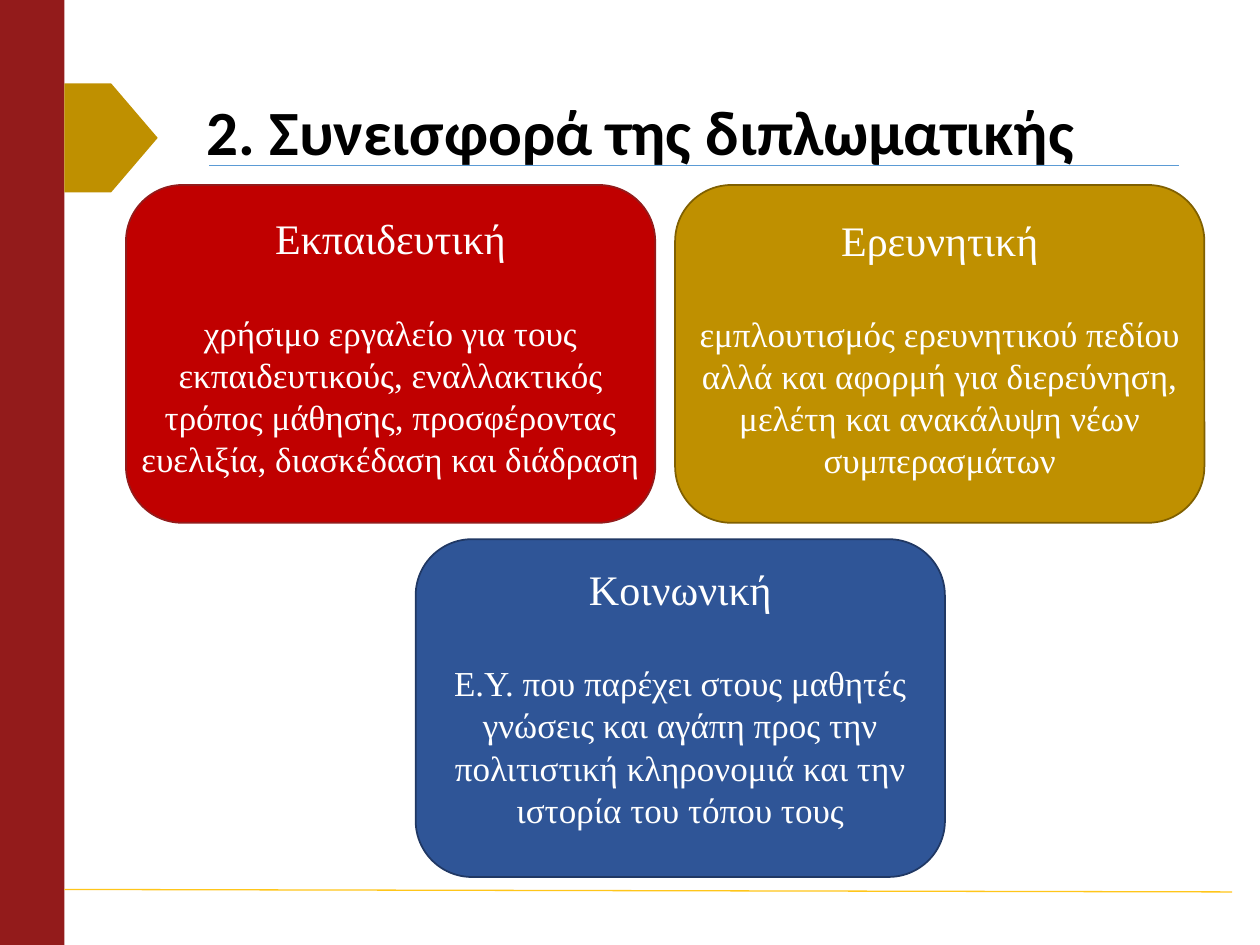
from lxml import etree
from pptx import Presentation
from pptx.dml.color import RGBColor
from pptx.enum.shapes import MSO_CONNECTOR, MSO_SHAPE
from pptx.enum.text import MSO_ANCHOR, PP_ALIGN
from pptx.oxml.ns import qn
from pptx.util import Cm, Pt

RECTANGLE = MSO_SHAPE.RECTANGLE
PENTAGON = MSO_SHAPE.PENTAGON
ROUNDED = MSO_SHAPE.ROUNDED_RECTANGLE
STRAIGHT = MSO_CONNECTOR.STRAIGHT
MIDDLE = MSO_ANCHOR.MIDDLE
LEFT, CENTER = PP_ALIGN.LEFT, PP_ALIGN.CENTER

SLIDE_W, SLIDE_H = 25.4, 19.05
BAND_W = 1.3
CARD_W, CARD_H = 10.67, 6.81
TOP_ROW, BOTTOM_ROW = 3.73, 10.87

CARDS = [
    (2.54, TOP_ROW, 0.43, "C00000", "931B1B", "Εκπαιδευτική",
     "χρήσιμο εργαλείο για τους εκπαιδευτικούς, εναλλακτικός τρόπος μάθησης, "
     "προσφέροντας ευελιξία, διασκέδαση και διάδραση"),
    (8.38, BOTTOM_ROW, 0.36, "2F5597", "203864", "Κοινωνική",
     "Ε.Υ. που παρέχει στους μαθητές γνώσεις και αγάπη προς την "
     "πολιτιστική κληρονομιά και την ιστορία του τόπου τους"),
    (13.61, TOP_ROW, 0.46, "BF9000", "806000", "Ερευνητική",
     "εμπλουτισμός ερευνητικού πεδίου αλλά και αφορμή για διερεύνηση, "
     "μελέτη και ανακάλυψη νέων συμπερασμάτων"),
]


def color(value):
    return RGBColor.from_string(value)


def add_block(slide, kind, left, top, width, height, fill, outline=None):
    block = slide.shapes.add_shape(kind, Cm(left), Cm(top), Cm(width), Cm(height))
    block.shadow.inherit = False
    block.fill.solid()
    block.fill.fore_color.rgb = color(fill)
    if outline:
        block.line.color.rgb = color(outline)
        block.line.width = Pt(1)
    else:
        block.line.fill.background()


def add_rule(slide, x1, y1, x2, y2, stroke):
    rule = slide.shapes.add_connector(STRAIGHT, Cm(x1), Cm(y1), Cm(x2), Cm(y2))
    rule.line.color.rgb = color(stroke)
    rule.line.width = Pt(0.75)
    etree.SubElement(rule._element.spPr, qn("a:effectLst"))


def add_run(paragraph, text, font, size, ink, bold=False):
    run = paragraph.add_run()
    run.text = text
    run.font.name = font
    run.font.size = Pt(size)
    run.font.bold = bold
    run.font.color.rgb = color(ink)


def add_frame(slide):
    add_block(slide, RECTANGLE, 0, 0, BAND_W, SLIDE_H, "931B1B")
    add_rule(slide, 4.22, 3.33, 23.77, 3.33, "5B9BD5")
    add_rule(slide, BAND_W, 17.93, 24.84, 17.98, "FFC61A")
    add_block(slide, PENTAGON, BAND_W, 1.68, 1.88, 2.2, "BF9000")


def fill_title(slide, left, top, width, height, text):
    title = slide.shapes.title
    title.left, title.top = Cm(left), Cm(top)
    title.width, title.height = Cm(width), Cm(height)
    frame = title.text_frame
    frame.word_wrap = True
    frame.vertical_anchor = MIDDLE
    paragraph = frame.paragraphs[0]
    paragraph.alignment = LEFT
    paragraph.line_spacing = 0.9
    add_run(paragraph, text, "Calibri", 36, "000000", True)


def add_card(slide, left, top, text_drop, fill, outline, heading, body):
    add_block(slide, ROUNDED, left, top, CARD_W, CARD_H, fill, outline)
    caption = slide.shapes.add_textbox(
        Cm(left), Cm(top + text_drop), Cm(CARD_W), Cm(5.74))
    frame = caption.text_frame
    frame.word_wrap = True
    heading_line = frame.paragraphs[0]
    body_lines = frame.add_paragraph()
    body_lines.space_before = Pt(27.6)
    for paragraph, text, size in ((heading_line, heading, 24), (body_lines, body, 20)):
        paragraph.alignment = CENTER
        add_run(paragraph, text, "Times New Roman", size, "FFFFFF")


def main():
    deck = Presentation()
    deck.slide_width, deck.slide_height = Cm(SLIDE_W), Cm(SLIDE_H)
    slide = deck.slides.add_slide(deck.slide_layouts[5])
    add_frame(slide)
    fill_title(slide, 3.91, 1.93, 19.99, 1.6, "2. Συνεισφορά της διπλωματικής")
    for card in CARDS:
        add_card(slide, *card)
    deck.save("out.pptx")


if __name__ == "__main__":
    main()
